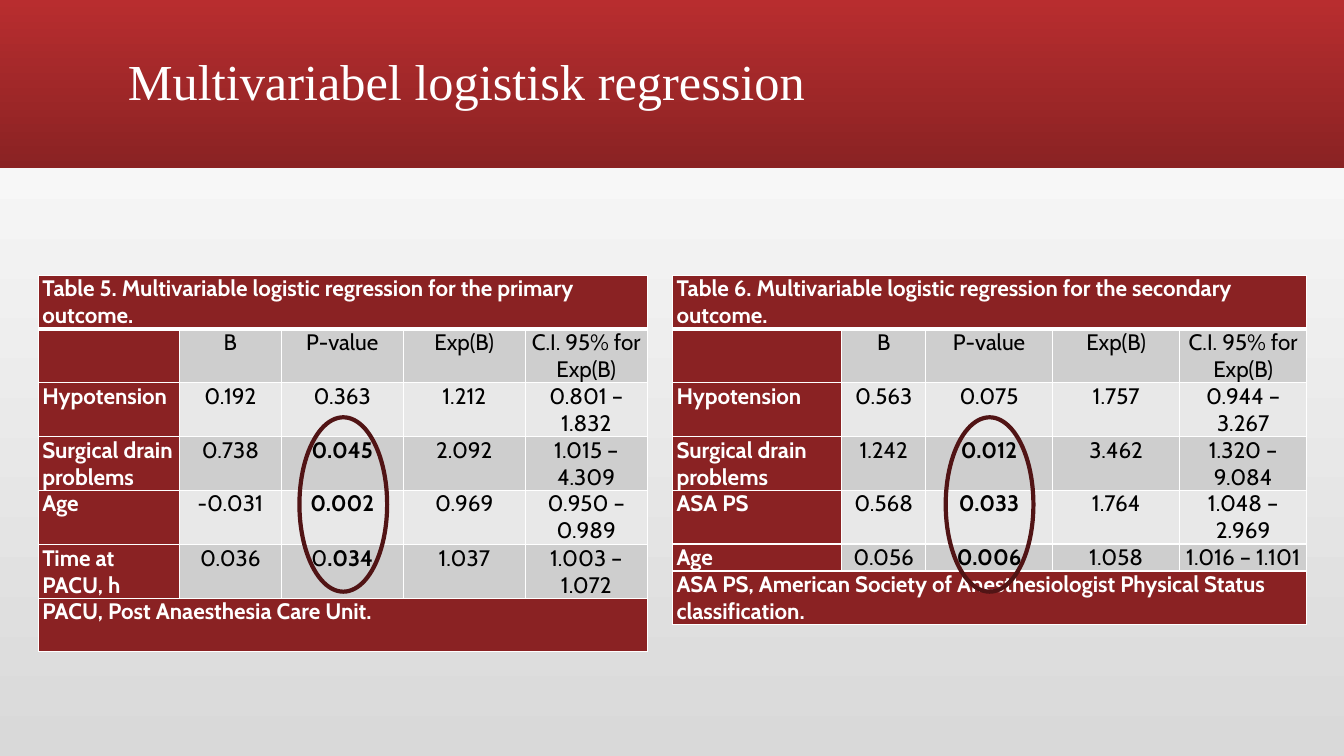
from dataclasses import dataclass

from lxml.etree import SubElement
from pptx import Presentation
from pptx.dml.color import RGBColor as Color
from pptx.dml.fill import FillFormat
from pptx.enum.shapes import MSO_SHAPE as Preset
from pptx.enum.text import MSO_ANCHOR as Anchor, PP_ALIGN as Align
from pptx.oxml.ns import qn
from pptx.slide import Slide
from pptx.table import _Cell as Cell
from pptx.util import Inches, Pt


@dataclass(frozen=True)
class Theme:
    title_font: str = "Times New Roman"
    table_font: str = "Cabin"
    title_size: int = 36
    table_size: int = 16
    white: str = "FFFFFF"
    black: str = "000000"
    red: str = "8A2223"
    bright_red: str = "B82D2F"
    ring: str = "511415"
    backdrop: str = "D9D9D9"
    bands: tuple[str, str] = ("CECECE", "E8E8E8")


@dataclass(frozen=True)
class ResultTable:
    left: float
    widths: list[float]
    heights: list[float]
    caption: str
    rows: list[list[str]]  # an asterisk marks where bold starts
    footnote: str
    ring_left: float


THEME = Theme()
TABLE_TOP = 2.73
HEADINGS = ["", "B", "P-value", "Exp(B)", "C.I. 95% for Exp(B)"]

TABLES = [
    ResultTable(
        0.38, [1.4, 1.01, 1.21, 1.21, 1.21], [0.53] * 4 + [0.54] + [0.53] * 2,
        "Table 5. Multivariable logistic regression for the primary outcome.",
        [
            ["Hypotension", "0.192", "0.363", "1.212", "0.801 – 1.832"],
            ["Surgical drain problems", "0.738", "*0.045", "2.092", "1.015 – 4.309"],
            ["Age", "-0.031", "*0.002", "0.969", "0.950 – 0.989"],
            ["Time at PACU, h", "0.036", "0*.034", "1.037", "1.003 – 1.072"],
        ],
        "PACU, Post Anaesthesia Care Unit.",
        2.97,
    ),
    ResultTable(
        6.67, [1.68, 0.83, 1.26, 1.26, 1.26], [0.53] * 5 + [0.26, 0.53],
        "Table 6. Multivariable logistic regression for the secondary outcome.",
        [
            ["Hypotension", "0.563", "0.075", "1.757", "0.944 – 3.267"],
            ["Surgical drain problems", "1.242", "*0.012", "3.462", "1.320 – 9.084"],
            ["ASA PS", "0.568", "*0.033", "1.764", "1.048 – 2.969"],
            ["Age", "0.056", "*0.006", "1.058", "1.016 – 1.101"],
        ],
        "ASA PS, American Society of Anesthesiologist Physical Status classification.",
        9.38,
    ),
]


def set_gradient(fill: FillFormat, colors: tuple[str, str], angle: int) -> None:
    fill.gradient()
    fill.gradient_angle = angle
    for stop, color, position in zip(fill.gradient_stops, colors, (0, 1)):
        stop.color.rgb = Color.from_string(color)
        stop.position = position


def add_span(para, text: str, color: str, **formats) -> None:
    span = para.add_run()
    span.text = text
    span.font.color.rgb = Color.from_string(color)
    for name, value in formats.items():
        setattr(span.font, name, value)


def set_borders(cell: Cell, widths: dict[str, int]) -> None:
    properties = cell._tc.get_or_add_tcPr()
    for side, width in widths.items():
        line = SubElement(properties, qn(f"a:ln{side}"), w=str(Pt(width)))
        SubElement(SubElement(line, qn("a:solidFill")), qn("a:srgbClr"), val=THEME.white)


def fill_cell(cell: Cell, text: str, row: int, is_label: bool) -> None:
    # The caption row is parted from the headings by a thicker line
    set_borders(cell, {"L": 1, "R": 1, "T": 3 if row == 1 else 1, "B": 3 if row == 0 else 1})
    cell.fill.solid()
    shade = THEME.red if is_label else THEME.bands[(row - 1) % 2]
    cell.fill.fore_color.rgb = Color.from_string(shade)
    margins = {"margin_left": 0.04, "margin_right": 0.04, "margin_top": 0, "margin_bottom": 0}
    for name, value in margins.items():
        setattr(cell, name, Inches(value))

    para = cell.text_frame.paragraphs[0]
    para.alignment = Align.LEFT if is_label else Align.CENTER
    plain, _, strong = text.partition("*")
    for part, bold in ((plain, is_label), (strong, True)):
        if part:
            add_span(para, part, THEME.white if is_label else THEME.black,
                     name=THEME.table_font, size=Pt(THEME.table_size), bold=bold)


def add_result_table(page: Slide, result: ResultTable) -> None:
    blanks = [""] * (len(HEADINGS) - 1)
    grid = [[result.caption, *blanks], HEADINGS, *result.rows, [result.footnote, *blanks]]
    last = len(grid) - 1
    table = page.shapes.add_table(
        len(grid), len(HEADINGS), Inches(result.left), Inches(TABLE_TOP),
        Inches(sum(result.widths)), Inches(sum(result.heights))).table
    for column, width in zip(table.columns, result.widths):
        column.width = Inches(width)
    for row, height in zip(table.rows, result.heights):
        row.height = Inches(height)
    for row, texts in enumerate(grid):
        for column, text in enumerate(texts):
            fill_cell(table.cell(row, column), text, row, column == 0 or row in (0, last))
    for row in (0, last):
        table.cell(row, 0).merge(table.cell(row, len(blanks)))


def add_ring(page: Slide, left: float) -> None:
    ring = page.shapes.add_shape(
        Preset.OVAL, Inches(left), Inches(4.14), Inches(0.87), Inches(1.73))
    ring.shadow.inherit = False
    ring.fill.background()
    ring.line.color.rgb = Color.from_string(THEME.ring)
    ring.line.width = Pt(3)


def add_header(page: Slide) -> None:
    band = page.shapes.add_shape(Preset.RECTANGLE, 0, 0, Inches(13.33), Inches(1.67))
    band.shadow.inherit = False
    band.line.fill.background()
    set_gradient(band.fill, (THEME.bright_red, THEME.red), 270)

    box = page.shapes.add_textbox(Inches(1.17), Inches(0.11), Inches(11), Inches(1.45))
    frame = box.text_frame
    frame.word_wrap = True
    frame.vertical_anchor = Anchor.MIDDLE
    para = frame.paragraphs[0]
    para.line_spacing = 0.9
    add_span(para, "Multivariabel logistisk regression", THEME.white,
             name=THEME.title_font, size=Pt(THEME.title_size))


def main() -> None:
    deck = Presentation()
    deck.slide_width, deck.slide_height = Inches(13.33), Inches(7.5)
    page = deck.slides.add_slide(deck.slide_layouts[6])

    # Backdrop and title band
    set_gradient(page.background.fill, (THEME.backdrop, THEME.white), 90)
    add_header(page)

    # Tables, then rings around the significant p-values
    for result in TABLES:
        add_result_table(page, result)
    for result in TABLES:
        add_ring(page, result.ring_left)

    deck.save("out.pptx")


if __name__ == "__main__":
    main()
